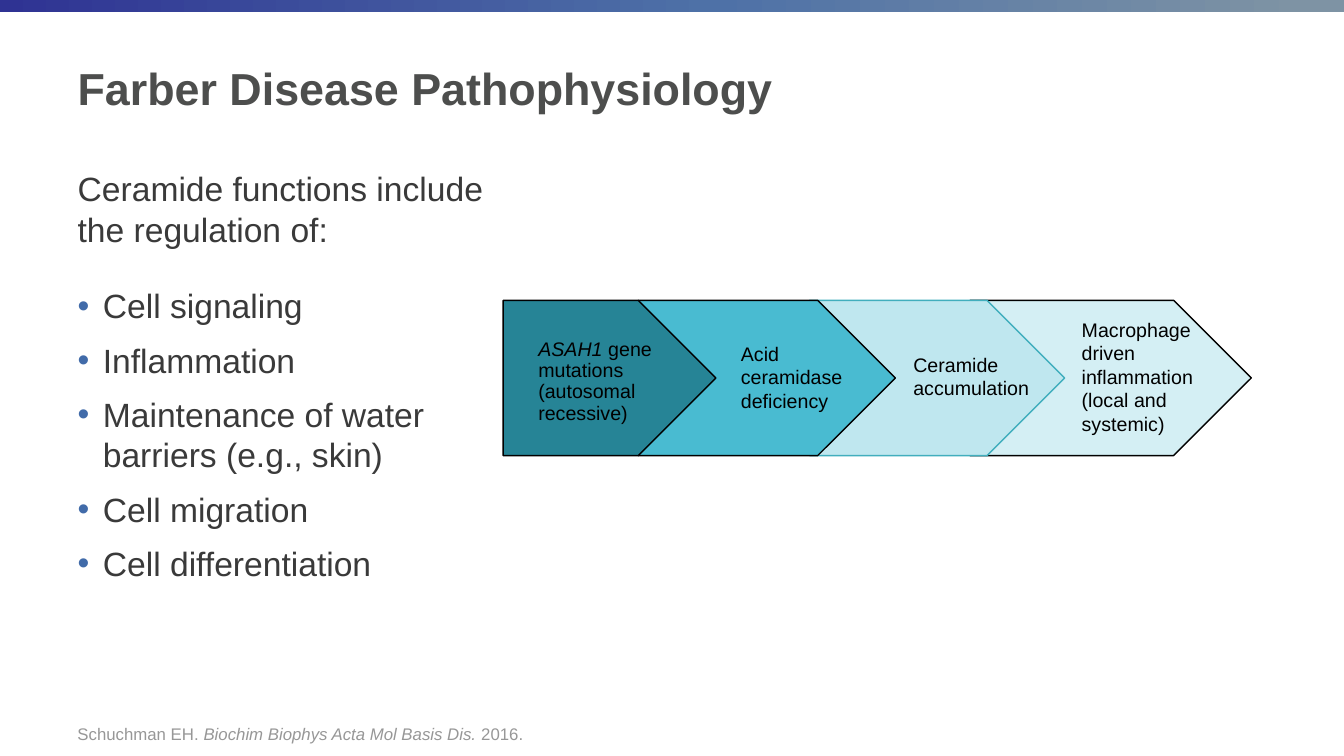
import copy

import pptx
import pptx.dml.color
import pptx.enum.shapes
import pptx.enum.text
import pptx.oxml
import pptx.oxml.ns
import pptx.util
from pptx.util import Inches

SHAPE = pptx.enum.shapes.MSO_SHAPE
ANCHOR = pptx.enum.text.MSO_ANCHOR


def color(hex_code):
    return pptx.dml.color.RGBColor.from_string(hex_code)


class SlideBuilder:
    font = "Arial"
    black = "000000"
    bullet_color = "416BA9"

    def __init__(self, presentation):
        self.slide = presentation.slides.add_slide(presentation.slide_layouts[1])

    def place(self, item, box):
        item.left, item.top, item.width, item.height = (Inches(v) for v in box)

    def style(self, paragraph, size, hex_code, bold=False):
        paragraph.alignment = pptx.enum.text.PP_ALIGN.LEFT
        for run in paragraph.runs:
            run.font.name = self.font
            run.font.size = pptx.util.Pt(size)
            run.font.bold = bold
            run.font.color.rgb = color(hex_code)

    def title(self, text, box):
        heading = self.slide.shapes.title
        self.place(heading, box)
        frame = heading.text_frame
        frame.text = text
        frame.vertical_anchor = ANCHOR.MIDDLE
        frame.auto_size = pptx.enum.text.MSO_AUTO_SIZE.NONE
        self.style(frame.paragraphs[0], 32, "4D4E4D", bold=True)

    def body(self, intro, points, box):
        content = self.slide.placeholders[1]
        self.place(content, box)
        frame = content.text_frame
        frame.text = "\n".join([intro, *points])
        frame.auto_size = pptx.enum.text.MSO_AUTO_SIZE.NONE
        for index, paragraph in enumerate(frame.paragraphs):
            self.style(paragraph, 24, "3A3A3A")
            # The first bullet stands further from the introduction
            paragraph.space_before = pptx.util.Pt(26 if index == 1 else 10)
            self.bullet(paragraph, shown=index > 0)

    def bullet(self, paragraph, shown):
        properties = paragraph._p.get_or_add_pPr()
        indent = Inches(0.25) if shown else 0
        properties.set("marL", str(indent))
        properties.set("indent", str(-indent))
        space = pptx.oxml.ns.nsdecls("a")
        parts = [f"<a:buNone {space}/>"]
        if shown:
            parts = [
                f'<a:buClr {space}><a:srgbClr val="{self.bullet_color}"/></a:buClr>',
                f'<a:buFont {space} typeface="{self.font}"/>',
                f'<a:buChar {space} char="•"/>',
            ]
        for part in parts:
            properties.append(pptx.oxml.parse_xml(part))

    def gradient_bar(self, box, stops):
        bar = self.slide.shapes.add_shape(SHAPE.RECTANGLE, *(Inches(v) for v in box))
        bar.shadow.inherit = False
        bar.line.fill.background()
        bar.fill.gradient()
        bar.fill.gradient_angle = 0
        stop_list = bar.element.spPr.find(".//" + pptx.oxml.ns.qn("a:gsLst"))
        while len(stop_list) < len(stops):
            stop_list.append(copy.deepcopy(stop_list[0]))
        for stop, (position, hex_code) in zip(bar.fill.gradient_stops, stops):
            stop.position = position
            stop.color.rgb = color(hex_code)

    def arrow(self, group, box, fill, outline):
        step = group.shapes.add_shape(SHAPE.PENTAGON, *(Inches(v) for v in box))
        step.shadow.inherit = False
        step.fill.solid()
        step.fill.fore_color.rgb = color(fill)
        step.line.color.rgb = color(outline)
        step.line.width = pptx.util.Pt(1)

    def text(self, owner, box, pieces, size, hex_code, anchor=ANCHOR.TOP, spacing=1):
        """Each piece is a pair of wording and italic flag."""
        label = owner.shapes.add_textbox(*(Inches(v) for v in box))
        frame = label.text_frame
        frame.word_wrap = True
        frame.vertical_anchor = anchor
        paragraph = frame.paragraphs[0]
        paragraph.line_spacing = spacing
        paragraph.text = pieces[0][0]
        for wording, _ in pieces[1:]:
            paragraph.add_run().text = wording
        self.style(paragraph, size, hex_code)
        if len(pieces) > 1:
            for run, (_, italic) in zip(paragraph.runs, pieces):
                run.font.italic = italic


def main():
    presentation = pptx.Presentation()
    presentation.slide_width = Inches(13.33)
    presentation.slide_height = Inches(7.5)
    page = SlideBuilder(presentation)

    # Top band, title and list
    page.gradient_bar(
        (0, 0, 13.33, 0.12), [(0, "2F3393"), (0.53, "4E71A7"), (0.97, "7E93A4")]
    )
    page.title("Farber Disease Pathophysiology", (0.67, 0.22, 11.75, 1.3))
    page.body(
        "Ceramide functions include the regulation of:",
        [
            "Cell signaling",
            "Inflammation",
            "Maintenance of water barriers (e.g., skin)",
            "Cell migration",
            "Cell differentiation",
        ],
        (0.67, 1.62, 4.57, 5.16),
    )

    # Disease pathway: the last step lies at the back
    pathway = page.slide.shapes.add_group_shape()
    for left, width, fill, outline in [
        (9.62, 2.79, "D4EFF4", page.black),
        (8.03, 2.53, "BFE7EF", "41AEBD"),
        (6.33, 2.55, "49BBD1", page.black),
        (4.99, 2.11, "268496", page.black),
    ]:
        page.arrow(pathway, (left, 2.98, width, 1.54), fill, outline)

    gene = [("ASAH1 ", True), ("gene mutations (autosomal recessive)", False)]
    inflammation = [("Macrophage\ndriven inflammation (local and systemic)", False)]
    for box, pieces, spacing in [
        ((5.24, 3.32, 1.42, 1), gene, 0.9),
        ((10.63, 3.1, 1.61, 1.11), inflammation, 1),
        ((7.25, 3.34, 1.45, 1.18), [("Acid ceramidase deficiency", False)], 1),
        ((8.96, 3.45, 1.55, 0.95), [("Ceramide accumulation", False)], 1),
    ]:
        page.text(pathway, box, pieces, 14, page.black, spacing=spacing)

    # Reference
    citation = [
        ("Schuchman EH. ", False),
        ("Biochim Biophys Acta Mol Basis Dis. ", True),
        ("2016.", False),
    ]
    page.text(
        page.slide, (0.67, 6.95, 11.75, 0.48), citation, 12, "979797", ANCHOR.BOTTOM
    )

    presentation.save("out.pptx")


if __name__ == "__main__":
    main()
